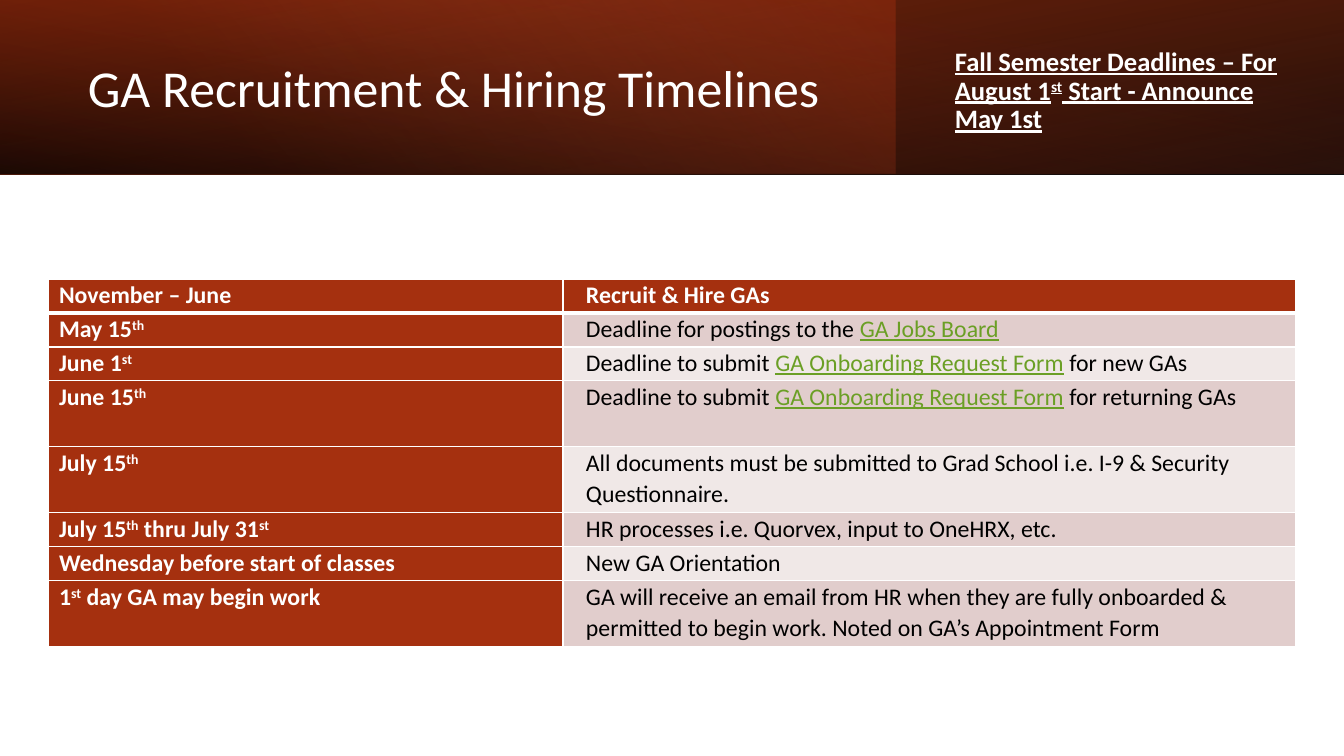
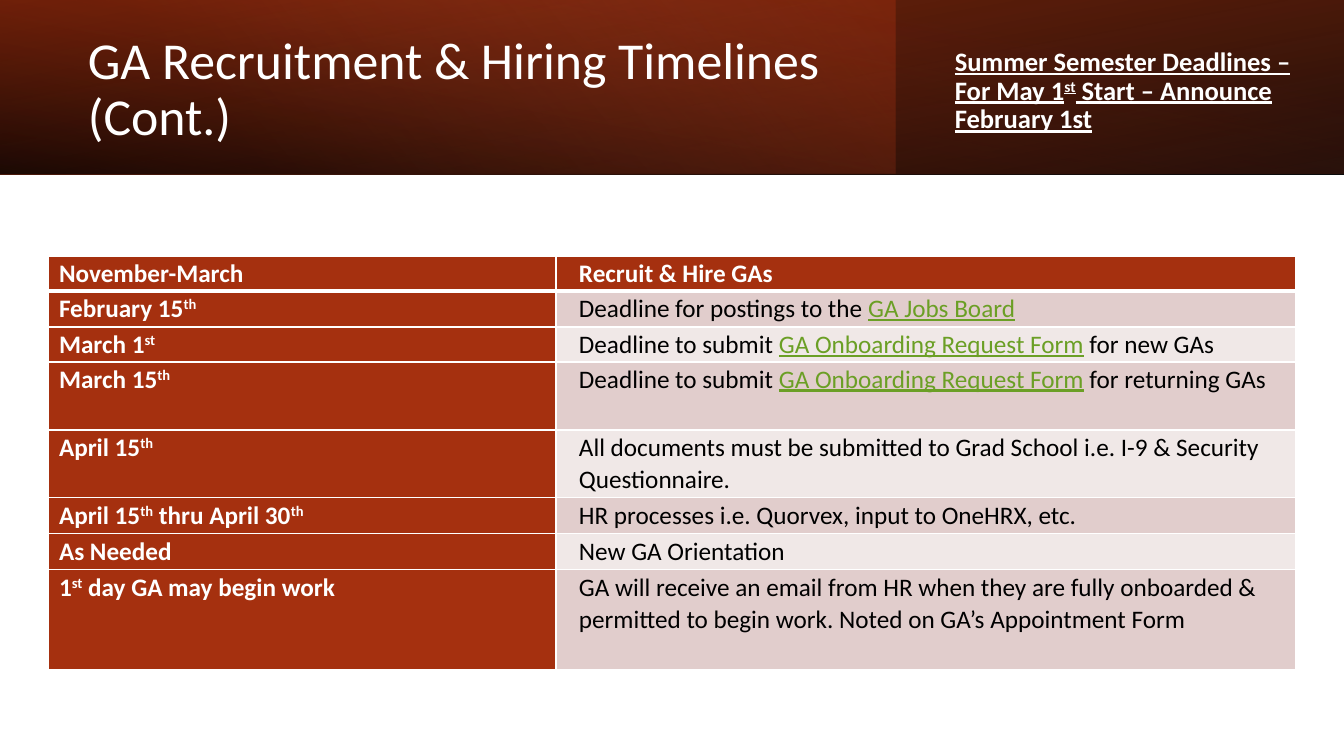
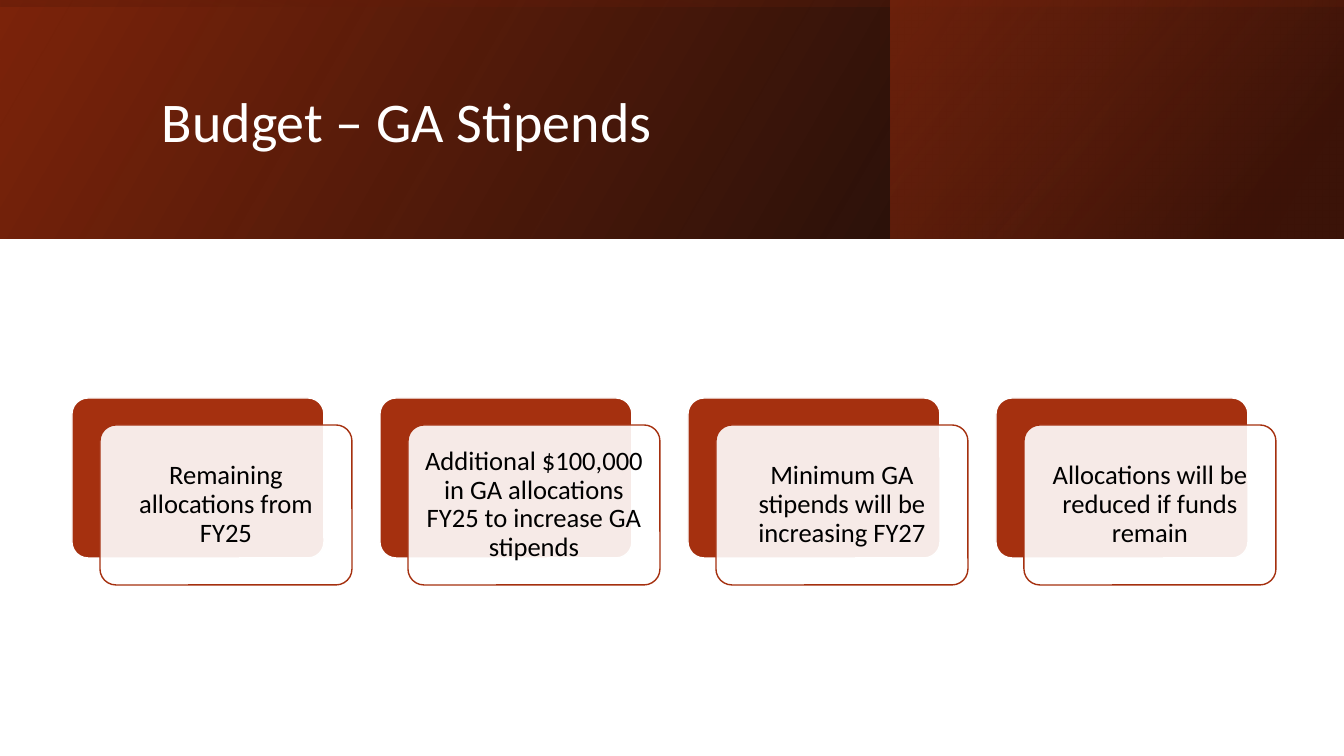
import pptx
import pptx.util
import pptx.dml.color
import pptx.enum.shapes
import pptx.enum.text
import pptx.oxml
import pptx.oxml.ns
from dataclasses import dataclass

WIDE, HIGH = 1344, 756
SCALE = 12192000 / WIDE  # EMU in one px


@dataclass(frozen=True)
class Theme:
    font: str = "Calibri"
    white: str = "FFFFFF"
    black: str = "000000"
    rust: str = "A5300F"
    brick: str = "7C240B"
    coral: str = "EE6E4A"
    umber: str = "521808"
    rose: str = "E1CDCC"
    blush: str = "F0E8E7"
    green: str = "6B9F25"
    title: int = 37
    large: int = 40
    body: int = 19


T = Theme()
SHAPE = pptx.enum.shapes.MSO_SHAPE
ALIGN = pptx.enum.text.PP_ALIGN
MIDDLE = pptx.enum.text.MSO_ANCHOR.MIDDLE


def px(*nums):
    return [pptx.util.Emu(round(n * SCALE)) for n in nums]


def rgb(code):
    return pptx.dml.color.RGBColor.from_string(code)


def xml(tag, body="", **attrs):
    pairs = "".join(f' {k}="{v}"' for k, v in attrs.items())
    space = pptx.oxml.ns.nsdecls("a")
    return pptx.oxml.parse_xml(f"<a:{tag} {space}{pairs}>{body}</a:{tag}>")


def tint(code, alpha=100):
    return f'<a:srgbClr val="{code}"><a:alpha val="{alpha * 1000}"/></a:srgbClr>'


# Text: ^...^ is raised, _..._ is shown as a link
def write(frame, text, size, color=T.black, bold=False, line=False,
          align=None, space=0.9, indent=0):
    frame.word_wrap = True
    para = frame.paragraphs[0]
    para.alignment, para.line_spacing = align, space
    if indent:
        para._p.get_or_add_pPr().set("marL", str(px(indent)[0]))
    for i, chunk in enumerate(text.split("^")):
        for j, part in enumerate(chunk.split("_")):
            if not part:
                continue
            run = para.add_run()
            run.text = part
            font = run.font
            font.name, font.size, font.bold = T.font, pptx.util.Pt(size), bold
            font.color.rgb = rgb(T.green if j % 2 else color)
            font.underline = line or j % 2 == 1
            if i % 2:
                run._r.get_or_add_rPr().set("baseline", "30000")


def label(slide, box, text, size, **look):
    frame = slide.shapes.add_textbox(*px(*box)).text_frame
    frame.vertical_anchor = MIDDLE
    write(frame, text, size, color=T.white, **look)


def form(slide, kind, box):
    shape = slide.shapes.add_shape(kind, *px(*box))
    shape.shadow.inherit = False
    return shape


# One gradient layer of a band; stops are (place, colour, opacity)
def wash(slide, box, angle, stops, turn=0, flip=False):
    x, y, w, h = box
    if turn == 270:
        box = x + (w - h) / 2, y + (h - w) / 2, h, w
    shape = form(slide, SHAPE.RECTANGLE, box)
    shape.rotation = turn
    shape.line.fill.background()
    shape.fill.background()
    props = shape._element.spPr
    if flip:
        props.xfrm.set("flipH", "1")
    marks = "".join(f'<a:gs pos="{at * 1000}">{tint(code, alpha)}</a:gs>'
                    for at, code, alpha in stops)
    blend = xml("gradFill", f'<a:gsLst>{marks}</a:gsLst><a:lin ang="{angle * 60000}"'
                ' scaled="0"/>', rotWithShape=1)
    props.replace(props.find(pptx.oxml.ns.qn("a:noFill")), blend)


# Band with a title and a deadline note
def header(slide, box, title, note):
    x, y, w, h = box
    wash(slide, box, 100, [(0, T.black, 96), (100, T.brick, 100)], 180, True)
    wash(slide, (x, y, w * 2 // 3, h), 140, [(0, T.rust, 41), (74, T.coral, 0)])
    wash(slide, box, 260, [(0, T.black, 63), (78, T.rust, 15)], flip=True)
    label(slide, (x + 78, y + 27, 778, 128), title, T.title)
    label(slide, (x + 945, y + 43, 357, 97), note, T.body, bold=True, line=True)


# Taller band for the budget slide
def banner(slide, box, title):
    x, y, w, h = box
    wash(slide, box, 330, [(0, T.black, 96), (100, T.brick, 100)], flip=True)
    wash(slide, (x + 891, y, 452, h), 320,
         [(19, T.umber, 68), (100, T.rust, 48)], flip=True)
    wash(slide, box, 350, [(23, T.brick, 16), (99, T.black, 45)], 270, True)
    label(slide, (x + 152, y + 38, 1072, 173), title, T.large)


def edge(cell, top, base):
    props = cell._tc.get_or_add_tcPr()
    for i, (side, width) in enumerate(zip("LRTB", (1, 1, top, base))):
        props.insert(i, xml("ln" + side, f"<a:solidFill>{tint(T.white)}</a:solidFill>",
                            w=width * 12700))


# Table of dates and tasks
def dates(slide, spot, cols, highs, rows, size):
    x, y = spot
    box = x, y, sum(cols), sum(highs)
    table = slide.shapes.add_table(len(rows), len(cols), *px(*box)).table
    table.horz_banding = False
    for col, wide in zip(table.columns, px(*cols)):
        col.width = wide
    for r, (row, high) in enumerate(zip(rows, px(*highs))):
        table.rows[r].height = high
        for c, text in enumerate(row):
            cell = table.cell(r, c)
            head = r == 0 or c == 0
            cell.margin_left, cell.margin_right = px(11, 11)
            cell.margin_top = cell.margin_bottom = 0
            cell.fill.solid()
            cell.fill.fore_color.rgb = rgb(T.rust if head else
                                           T.rose if r % 2 else T.blush)
            edge(cell, 3 if r == 1 else 1, 3 if r == 0 else 1)
            write(cell.text_frame, text, size, color=T.white if head else T.black,
                  bold=head, space=1.07, indent=12 * c)


# Card: a solid plate with a pale plate set over it
def card(slide, box, text):
    x, y, w, h = box
    for shift, fill, alpha, line in ((0, T.rust, 100, T.white),
                                     (1, T.white, 90, T.rust)):
        plate = form(slide, SHAPE.ROUNDED_RECTANGLE,
                     (x + 28 * shift, y + 27 * shift, w, h))
        plate.adjustments[0] = 0.1
        plate.fill.solid()
        plate.fill.fore_color.rgb = rgb(fill)
        hue = plate._element.spPr.find(".//" + pptx.oxml.ns.qn("a:srgbClr"))
        hue.append(xml("alpha", val=alpha * 1000))
        plate.line.color.rgb = rgb(line)
        plate.line.width = pptx.util.Pt(1)
    frame = plate.text_frame
    frame.margin_left, frame.margin_right, frame.margin_top, frame.margin_bottom = px(8, 8, 8, 8)
    frame.vertical_anchor = MIDDLE
    write(frame, text, T.body, align=ALIGN.CENTER)


def cards(slide, box, texts, step):
    x, y, w, h = box
    for i, text in enumerate(texts):
        card(slide, (x + i * step, y, w, h), text)


TASKS = [
    "Recruit & Hire GAs",
    "Deadline for postings to the _GA Jobs Board_",
    "Deadline to submit _GA Onboarding Request Form_ for new GAs",
    "Deadline to submit _GA Onboarding Request Form_ for returning GAs",
    "All documents must be submitted to Grad School i.e. I-9 & Security Questionnaire.",
    "HR processes i.e. Quorvex, input to OneHRX, etc.",
    "New GA Orientation",
    "GA will receive an email from HR when they are fully onboarded & permitted "
    "to begin work. Noted on GA’s Appointment Form",
]
START = "1^st^ day GA may begin work"
FALL = ["November – June", "May 15^th^", "June 1^st^", "June 15^th^", "July 15^th^",
        "July 15^th^ thru July 31^st^", "Wednesday before start of classes", START]
SUMMER = ["November-March", "February 15^th^", "March 1^st^", "March 15^th^",
          "April 15^th^", "April 15^th^ thru April 30^th^", "As Needed", START]
TERMS = [
    ("GA Recruitment & Hiring Timelines",
     "Fall Semester Deadlines – For August 1^st^ Start - Announce May 1st",
     FALL, (48, 279), (515, 733), (34, 34, 34, 66, 66, 34, 34, 66), 17),
    ("GA Recruitment & Hiring Timelines (Cont.)",
     "Summer Semester Deadlines – For May 1^st^ Start – Announce February 1st",
     SUMMER, (48, 256), (508, 740), (35, 36, 35, 68, 68, 36, 36, 100), 18),
]
FUNDS = [
    "Remaining allocations from FY25",
    "Additional $100,000 in GA allocations FY25 to increase GA stipends",
    "Minimum GA stipends will be increasing FY27",
    "Allocations will be reduced if funds remain",
]


def main():
    deck = pptx.Presentation()
    deck.slide_width, deck.slide_height = px(WIDE, HIGH)
    blank = deck.slide_layouts[6]
    # Timelines
    for title, note, days, spot, cols, highs, size in TERMS:
        slide = deck.slides.add_slide(blank)
        header(slide, (0, 0, WIDE, 174), title, note)
        dates(slide, spot, cols, highs, list(zip(days, TASKS)), size)
    # Budget
    slide = deck.slides.add_slide(blank)
    banner(slide, (0, 0, WIDE, 239), "Budget – GA Stipends")
    cards(slide, (72, 398, 252, 160), FUNDS, 308)
    deck.save("out.pptx")


if __name__ == "__main__":
    main()
